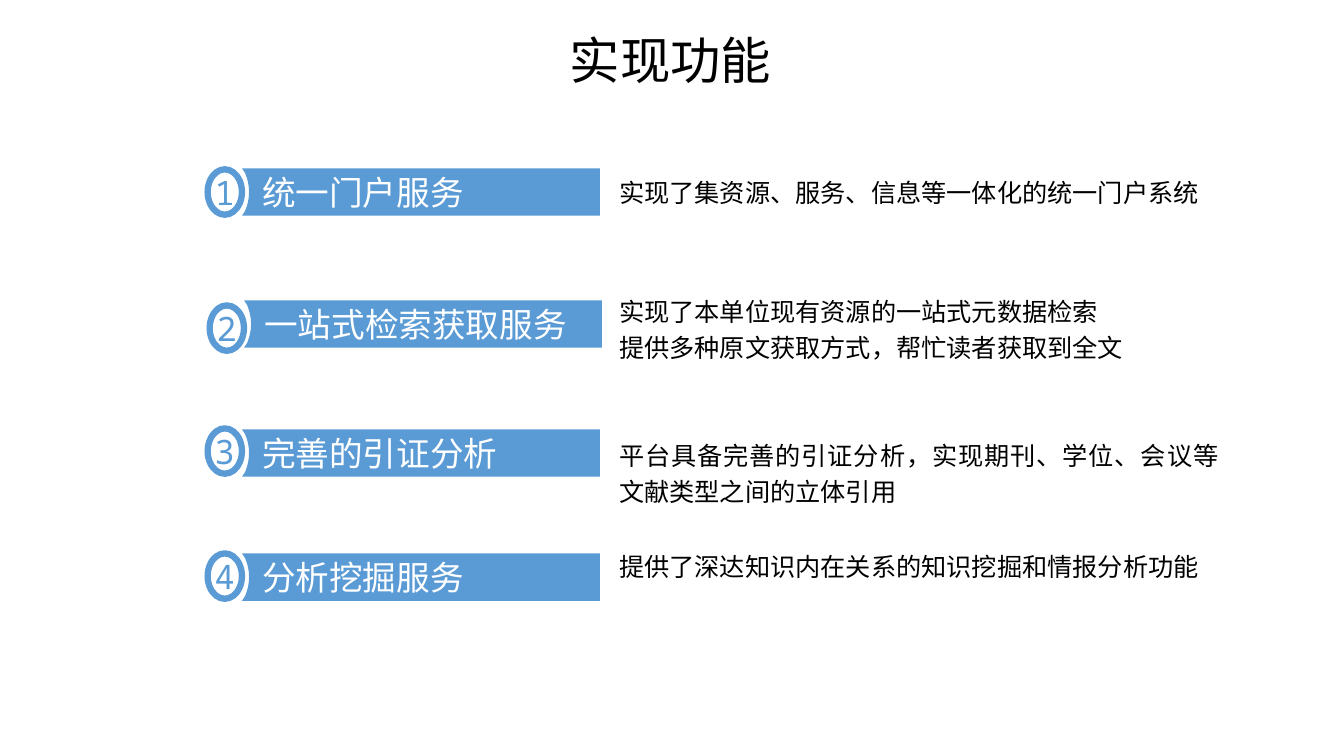
from pptx import Presentation
from pptx.dml.color import RGBColor
from pptx.enum import shapes, text
from pptx.util import Inches, Pt

BLUE, WHITE, BLACK = "5B9BD5", "FFFFFF", "000000"
LEFT, MID = text.PP_ALIGN.LEFT, text.PP_ALIGN.CENTER
JUST = text.PP_ALIGN.JUSTIFY

# Number, heading, bar left and top, ring top
BARS = [
    ("1", "统一门户服务", 2.4, 1.67, 1.68),
    ("2", "一站式检索获取服务", 2.42, 2.98, 3.03),
    ("3", "完善的引证分析", 2.4, 4.26, 4.25),
    ("4", "分析挖掘服务", 2.4, 5.49, 5.49),
]
# Lines, top, height, alignment, line spacing
NOTES = [
    (["实现了集资源、服务、信息等一体化的统一门户系统"], 1.71, 0.71, LEFT, 1.0),
    (["实现了本单位现有资源的一站式元数据检索",
      "提供多种原文获取方式，帮忙读者获取到全文"], 2.83, 0.71, JUST, 1.2),
    (["平台具备完善的引证分析，实现期刊、学位、会议等文献类型之间的立体引用"],
     4.26, 0.71, JUST, 1.2),
    (["提供了深达知识内在关系的知识挖掘和情报分析功能"], 5.36, 1.15, JUST, 1.2),
]


def color(code):
    return RGBColor.from_string(code)


def write(shape, lines, size=18, font="Calibri", ink=BLACK, align=LEFT,
          space=1.0, pad=(0.1, 0.05, 0.1, 0.05), middle=False):
    frame = shape.text_frame
    frame.word_wrap = True
    frame.vertical_anchor = (text.MSO_ANCHOR.MIDDLE if middle
                             else text.MSO_ANCHOR.TOP)
    (frame.margin_left, frame.margin_top,
     frame.margin_right, frame.margin_bottom) = map(Inches, pad)
    for i, line in enumerate(lines):
        para = frame.add_paragraph() if i else frame.paragraphs[0]
        para.alignment = align
        para.line_spacing = space
        run = para.add_run()
        run.text = line
        run.font.size = Pt(size)
        run.font.name = font
        run.font.color.rgb = color(ink)


def add_text(slide, lines, x, y, w, h, **style):
    box = slide.shapes.add_textbox(*map(Inches, (x, y, w, h)))
    write(box, lines, **style)


def add_bar(slide, label, x, y, w=3.55, h=0.47):
    # The left edge bulges inward, following the ring beside it
    steps = [i / 8 for i in range(-8, 9)]
    curve = [(x + 0.07 - 0.04 * t * t, y + h / 2 - 0.19 * t) for t in steps]
    points = [(x + w, y), (x + w, y + h), (x, y + h)] + curve
    path = slide.shapes.build_freeform(Inches(x), Inches(y))
    path.add_line_segments([(Inches(a), Inches(b)) for a, b in points])
    bar = path.convert_to_shape()
    bar.shadow.inherit = False
    bar.fill.solid()
    bar.fill.fore_color.rgb = color(BLUE)
    bar.line.fill.background()
    write(bar, [label], size=24, ink=WHITE, align=JUST,
          pad=(0.2, 0.05, 0.1, 0.05), middle=True)


def add_ring(slide, digit, x, y):
    ring = slide.shapes.add_shape(
        shapes.MSO_SHAPE.OVAL, *map(Inches, (x, y, 0.34, 0.45)))
    ring.shadow.inherit = False
    ring.fill.background()
    ring.line.color.rgb = color(BLUE)
    ring.line.width = Pt(4.5)
    write(ring, [digit], size=24, font="Noto Sans Mono", ink=BLUE,
          align=MID, pad=(0, 0, 0, 0), middle=True)


def main():
    deck = Presentation()
    deck.slide_width, deck.slide_height = Inches(13.33), Inches(7.5)
    slide = deck.slides.add_slide(deck.slide_layouts[6])

    # Title
    add_text(slide, ["实现功能"], 1.16, 0.31, 10.98, 0.62,
             size=36, font="Arial", align=MID, space=0.9)

    # Numbered headings
    for digit, label, x, y, top in BARS:
        add_bar(slide, label, x, y)
        add_ring(slide, digit, x - 0.34, top)

    # Descriptions
    for lines, y, h, align, space in NOTES:
        add_text(slide, lines, 6.1, y, 6.03, h, align=align, space=space,
                 pad=(0.04, 0.05, 0.04, 0.05))

    deck.save("out.pptx")


if __name__ == "__main__":
    main()
